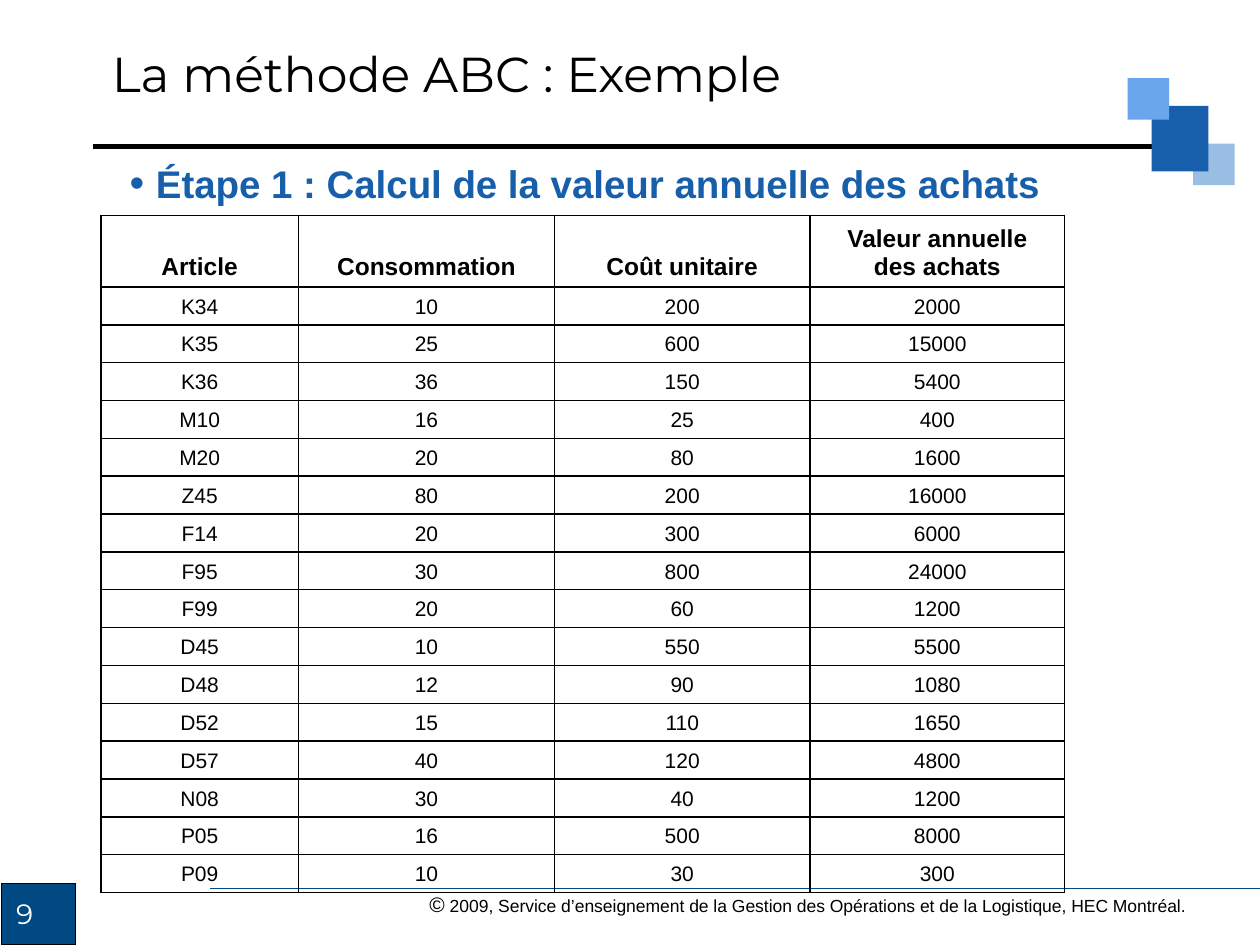
from lxml import etree
from pptx import Presentation
from pptx import util as u
from pptx.dml.color import RGBColor
from pptx.enum import shapes, text
from pptx.oxml.ns import qn

COLORS = {
    "black": "000000", "white": "FFFFFF", "navy": "004982",
    "blue": "185FAB", "sky": "69A6EB", "pale": "99BDE3",
}
TITLE = "La méthode ABC : Exemple"
STEP = "Étape 1 : Calcul de la valeur annuelle des achats"
COPYRIGHT = " 2009, Service d’enseignement de la Gestion des Opérations et de la Logistique, HEC Montréal."
HEADERS = ["Article", "Consommation", "Coût unitaire", "Valeur annuelle des achats"]
ARTICLES = [
    ("K34", 10, 200), ("K35", 25, 600), ("K36", 36, 150), ("M10", 16, 25),
    ("M20", 20, 80), ("Z45", 80, 200), ("F14", 20, 300), ("F95", 30, 800),
    ("F99", 20, 60), ("D45", 10, 550), ("D48", 12, 90), ("D52", 15, 110),
    ("D57", 40, 120), ("N08", 30, 40), ("P05", 16, 500), ("P09", 10, 30),
]
COLUMN_WIDTHS = [1.57, 2.03, 2.03, 2.02]
HEADER_HEIGHT, ROW_HEIGHT = 0.56, 0.27
SQUARES = [
    ((9.47, 1.14, 0.33, 0.33), "pale"),
    ((9.14, 0.84, 0.45, 0.52), "blue"),
    ((8.95, 0.62, 0.33, 0.33), "sky"),
]


def color(name):
    return RGBColor.from_string(COLORS[name])


def inches(values):
    return [u.Inches(value) for value in values]


def set_format(target, **values):
    for name, value in values.items():
        setattr(target, name, value)


def add_run(paragraph, content, size, font="Arial", fill="black", bold=False):
    run = paragraph.add_run()
    run.text = content
    set_format(run.font, size=u.Pt(size), name=font, bold=bold)
    run.font.color.rgb = color(fill)


def add_square(slide, box, fill, line=None):
    shape = slide.shapes.add_shape(shapes.MSO_SHAPE.RECTANGLE, *inches(box))
    shape.shadow.inherit = False
    shape.fill.solid()
    shape.fill.fore_color.rgb = color(fill)
    if line:
        shape.line.color.rgb = color(line)
        shape.line.width = u.Pt(0.75)
    else:
        shape.line.fill.background()


def add_rule(slide, left, right, top, fill, width):
    rule = slide.shapes.add_connector(
        shapes.MSO_CONNECTOR.STRAIGHT, *inches((left, top, right, top)))
    rule.line.color.rgb = color(fill)
    rule.line.width = u.Pt(width)
    etree.SubElement(rule._element.spPr, qn("a:effectLst"))


def add_text(slide, box, runs, **frame_format):
    frame = slide.shapes.add_textbox(*inches(box)).text_frame
    set_format(frame, word_wrap=True, **frame_format)
    paragraph = frame.paragraphs[0]
    for run in runs:
        add_run(paragraph, **run)
    return paragraph


def add_bullet(paragraph, indent):
    properties = paragraph._p.get_or_add_pPr()
    properties.set("marL", str(u.Inches(indent)))
    properties.set("indent", str(-u.Inches(indent)))
    etree.SubElement(properties, qn("a:buSzPct"), val="109000")
    etree.SubElement(properties, qn("a:buFont"), typeface="Arial")
    etree.SubElement(properties, qn("a:buChar"), char="•")


def add_borders(cell):
    properties = cell._tc.get_or_add_tcPr()
    for index, side in enumerate(("lnL", "lnR", "lnT", "lnB")):
        line = etree.Element(qn(f"a:{side}"), w=str(u.Pt(1)))
        fill = etree.SubElement(line, qn("a:solidFill"))
        etree.SubElement(fill, qn("a:srgbClr"), val=COLORS["black"])
        properties.insert(index, line)


def add_purchases(slide):
    rows = [HEADERS] + [(*article, article[1] * article[2]) for article in ARTICLES]
    height = HEADER_HEIGHT + ROW_HEIGHT * len(ARTICLES)
    box = (0.8, 1.71, sum(COLUMN_WIDTHS), height)
    table = slide.shapes.add_table(len(rows), len(HEADERS), *inches(box)).table
    set_format(table, first_row=False, horz_banding=False)
    for column, width in zip(table.columns, COLUMN_WIDTHS):
        column.width = u.Inches(width)
    for index, values in enumerate(rows):
        header = index == 0
        table.rows[index].height = u.Inches(HEADER_HEIGHT if header else ROW_HEIGHT)
        for cell, value in zip(table.rows[index].cells, values):
            cell.fill.background()
            add_borders(cell)
            cell.vertical_anchor = text.MSO_ANCHOR.BOTTOM
            paragraph = cell.text_frame.paragraphs[0]
            paragraph.alignment = text.PP_ALIGN.CENTER
            add_run(paragraph, str(value), 14 if header else 12, bold=header)


def main():
    presentation = Presentation()
    set_format(presentation, slide_width=u.Inches(10), slide_height=u.Inches(7.5))
    slide = presentation.slides.add_slide(presentation.slide_layouts[6])

    add_square(slide, (0.01, 7.01, 0.59, 0.49), "navy", "black")
    add_text(slide, (0.03, 7.07, 0.5, 0.64),
             [dict(content="9", size=16, font="Montserrat", fill="white")])
    add_rule(slide, 1.67, 10, 7.05, "navy", 0.75)
    add_text(slide, (3.31, 7.03, 6.42, 0.3),
             [dict(content="©", size=12), dict(content=COPYRIGHT, size=10)])
    add_rule(slide, 0.74, 9.41, 1.16, "black", 2.75)
    for box, fill in SQUARES:
        add_square(slide, box, fill)

    step = add_text(slide, (0.93, 1.15, 8.23, 0.81),
                    [dict(content=STEP, size=22, fill="blue", bold=True)],
                    margin_top=u.Inches(0.12))
    add_bullet(step, 0.21)
    add_purchases(slide)
    add_text(slide, (0.79, 0, 8.16, 1.15),
             [dict(content=TITLE, size=28, font="Montserrat")],
             vertical_anchor=text.MSO_ANCHOR.MIDDLE)
    presentation.save("out.pptx")


if __name__ == "__main__":
    main()
